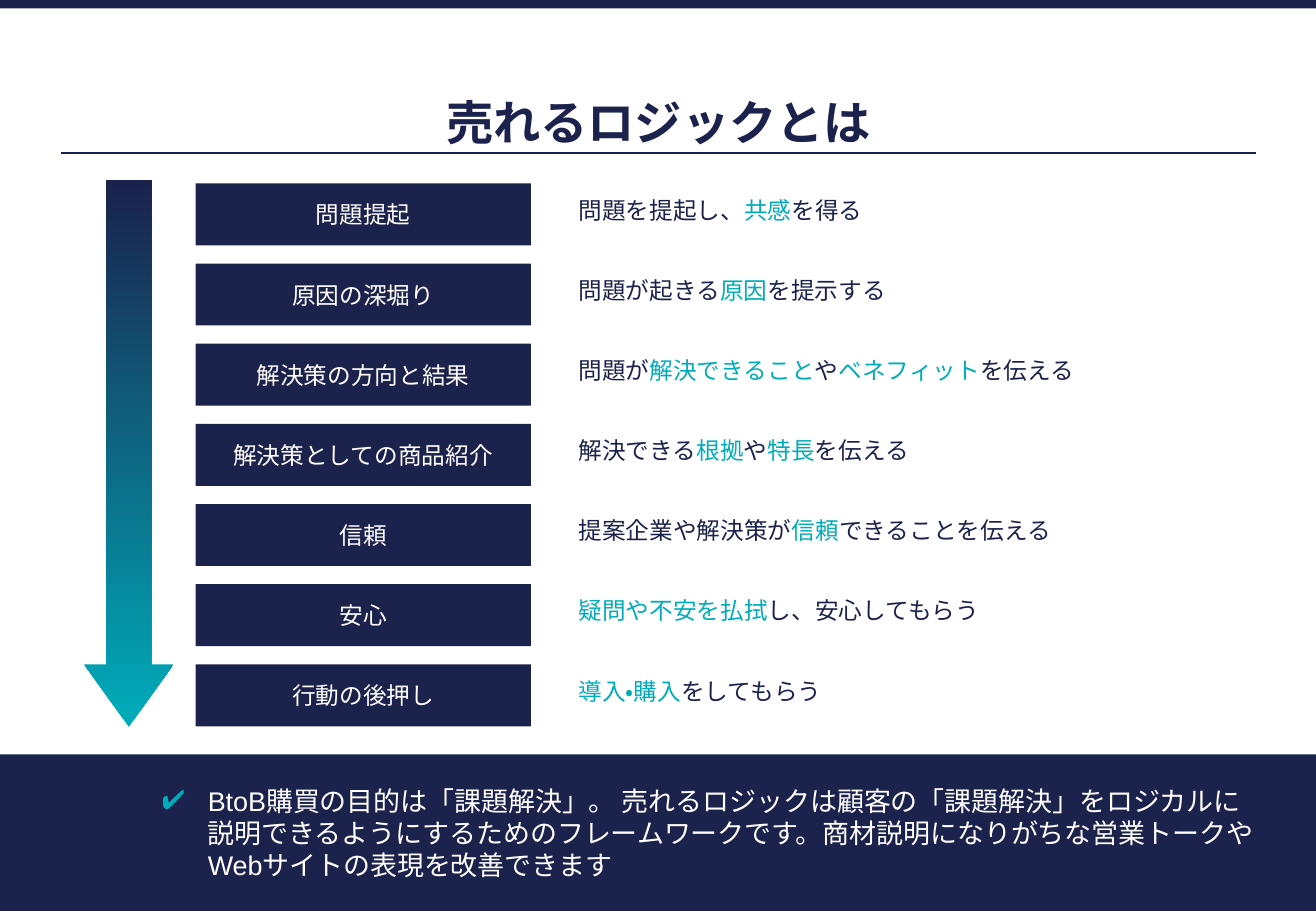
from dataclasses import dataclass
from lxml.etree import SubElement
from pptx import Presentation
from pptx.dml.color import RGBColor
from pptx.enum.lang import MSO_LANGUAGE_ID
from pptx.enum.shapes import MSO_CONNECTOR, MSO_SHAPE
from pptx.enum.text import MSO_ANCHOR, MSO_AUTO_SIZE, PP_ALIGN
from pptx.oxml.ns import qn
from pptx.util import Pt

PX = 9144  # EMU in one px, 100 px to the inch


@dataclass(frozen=True)
class Theme:
    navy: str = "1B224C"
    teal: str = "00ACBA"
    white: str = "FFFFFF"
    latin: str = "Arial"
    asian: str = "Noto Sans CJK JP"
    title: int = 28
    note: int = 16
    step: int = 14


@dataclass(frozen=True)
class Box:
    x: int
    y: int
    w: int
    h: int

    def emu(self) -> tuple:
        return tuple(n * PX for n in (self.x, self.y, self.w, self.h))


@dataclass(frozen=True)
class Step:
    name: str
    goal: str  # parts between asterisks are in the accent colour


THEME = Theme()
PITCH = 66
STEPS = [
    Step("問題提起", "問題を提起し、*共感*を得る"),
    Step("原因の深堀り", "問題が起きる*原因*を提示する"),
    Step("解決策の方向と結果", "問題が*解決できること*や*ベネフィット*を伝える"),
    Step("解決策としての商品紹介", "解決できる*根拠*や*特長*を伝える"),
    Step("信頼", "提案企業や解決策が*信頼*できることを伝える"),
    Step("安心", "*疑問や不安を払拭*し、安心してもらう"),
    Step("行動の後押し", "*導入・購入*をしてもらう"),
]
NOTE = (
    "BtoB購買の目的は「課題解決」。 売れるロジックは顧客の「課題解決」をロジカルに\v"
    "説明できるようにするためのフレームワークです。"
    "商材説明になりがちな営業トークやWebサイトの表現を改善できます"
)


def paint(item, tint: str) -> None:
    item.fill.solid()
    item.fill.fore_color.rgb = RGBColor.from_string(tint)


def assign(item, form: dict) -> None:
    for key, value in form.items():
        setattr(item, key, value)


def place(item, box: Box) -> None:
    assign(item, dict(zip(("left", "top", "width", "height"), box.emu())))


def frame(item, pad: tuple, **form) -> None:
    """Set the text box insets (left, top, right, bottom) and other frame values."""
    sides = ("margin_left", "margin_top", "margin_right", "margin_bottom")
    insets = dict(zip(sides, (n * PX for n in pad)))
    assign(item.text_frame, {"word_wrap": True, **insets, **form})


def style(font, size: int, tint: str, face: str, bold: bool = False) -> None:
    assign(font, {"size": Pt(size), "name": face, "bold": bold,
                  "language_id": MSO_LANGUAGE_ID.JAPANESE})
    font.color.rgb = RGBColor.from_string(tint)


def write(para, text: str, size: int, tint: str, face: str, bold: bool = False) -> None:
    """Fill a paragraph, with parts between asterisks in the accent colour."""
    for i, part in enumerate(text.split("*")):
        if part:
            para.add_line_break() if part == "\v" else None
            run = para.add_run()
            run.text = part
            style(run.font, size, THEME.teal if i % 2 else tint, face, bold)


def block(slide, box: Box, kind=MSO_SHAPE.RECTANGLE):
    item = slide.shapes.add_shape(kind, *box.emu())
    item.shadow.inherit = False
    item.line.fill.background()
    paint(item, THEME.navy)
    return item


def rule(slide, x: int, y: int, end: int) -> None:
    line = slide.shapes.add_connector(
        MSO_CONNECTOR.STRAIGHT, x * PX, y * PX, end * PX, y * PX)
    line.line.width = Pt(1)
    line.line.color.rgb = RGBColor.from_string(THEME.navy)
    SubElement(line._element.spPr, qn("a:effectLst"))


def head(item, text: str) -> None:
    place(item, Box(50, 52, 984, 73))
    frame(item, (0, 0, 0, 0), vertical_anchor=MSO_ANCHOR.MIDDLE,
          auto_size=MSO_AUTO_SIZE.NONE)
    para = item.text_frame.paragraphs[0]
    assign(para, {"alignment": PP_ALIGN.CENTER, "line_spacing": 1.5})
    write(para, text, THEME.title, THEME.navy, THEME.latin, True)


def check(para, indent: int) -> None:
    """Give a paragraph a hanging check mark."""
    props = para._p.get_or_add_pPr()
    props.set("marL", str(indent * PX))
    props.set("indent", str(-indent * PX))
    tint = SubElement(props, qn("a:buClr"))
    SubElement(tint, qn("a:srgbClr"), val=THEME.teal)
    SubElement(props, qn("a:buChar"), char="✔")


def foot(item, text: str) -> None:
    place(item, Box(0, 621, 1083, 129))
    paint(item, THEME.navy)
    frame(item, (133, 0, 31, 0), vertical_anchor=MSO_ANCHOR.MIDDLE,
          auto_size=MSO_AUTO_SIZE.NONE)
    para = item.text_frame.paragraphs[0]
    check(para, 38)
    assign(para, {"alignment": PP_ALIGN.LEFT, "space_before": Pt(0)})
    para.text = text
    for run in para.runs:
        style(run.font, THEME.note, THEME.white, THEME.latin)


def row(slide, step: Step, shift: int) -> None:
    tag = block(slide, Box(161, 151 + shift, 276, 51))
    frame(tag, (8, 8, 8, 8), vertical_anchor=MSO_ANCHOR.MIDDLE)
    para = tag.text_frame.paragraphs[0]
    para.alignment = PP_ALIGN.CENTER
    write(para, step.name, THEME.step, THEME.white, THEME.asian)

    goal = slide.shapes.add_textbox(*Box(476, 161 + shift, 538, 24).emu())
    frame(goal, (0, 0, 0, 0), auto_size=MSO_AUTO_SIZE.SHAPE_TO_FIT_TEXT)
    write(goal.text_frame.paragraphs[0], step.goal,
          THEME.step, THEME.navy, THEME.asian)


def arrow(slide) -> None:
    item = block(slide, Box(-119, 337, 450, 73), MSO_SHAPE.RIGHT_ARROW)
    item.rotation = 90
    item.adjustments[0] = 0.51
    item.adjustments[1] = 0.7
    item.fill.gradient()
    item.fill.gradient_angle = 180
    for stop, tint in zip(item.fill.gradient_stops, (THEME.teal, THEME.navy)):
        stop.color.rgb = RGBColor.from_string(tint)


def main() -> None:
    deck = Presentation()
    assign(deck, {"slide_width": 1083 * PX, "slide_height": 750 * PX})
    slide = deck.slides.add_slide(deck.slide_layouts[1])
    block(slide, Box(0, 0, 1083, 7))
    rule(slide, 50, 126, 1034)
    head(slide.shapes.title, "売れるロジックとは")
    foot(slide.placeholders[1], NOTE)
    for i, step in enumerate(STEPS):
        row(slide, step, i * PITCH)
    arrow(slide)
    deck.save("out.pptx")


if __name__ == "__main__":
    main()
